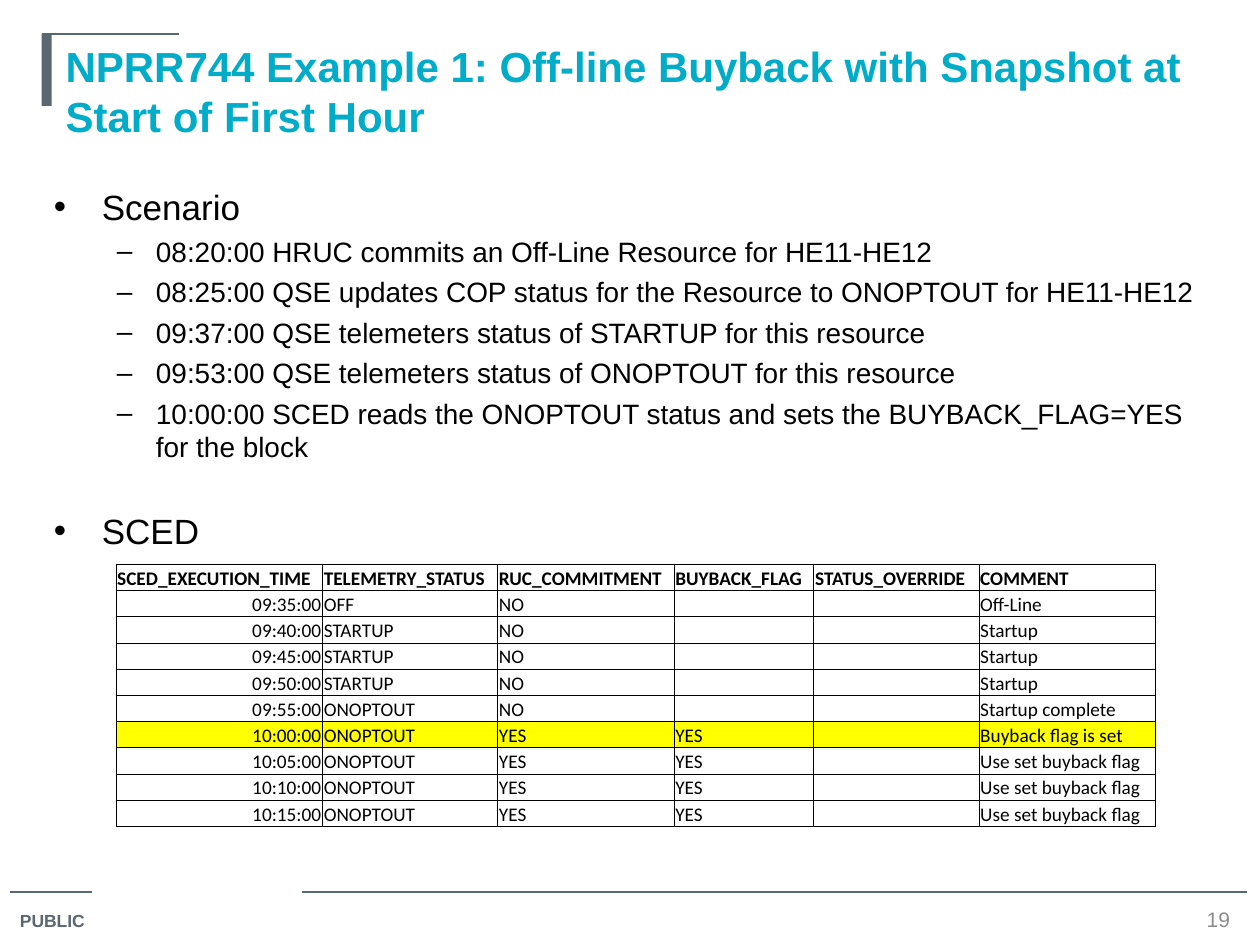
"""Build the off-line buyback example slide with its scenario and SCED table."""
from lxml.etree import SubElement
from pptx import Presentation
from pptx.dml.color import RGBColor
from pptx.enum.shapes import MSO_CONNECTOR, MSO_SHAPE
from pptx.enum.text import MSO_ANCHOR as Anchor, MSO_AUTO_SIZE, PP_ALIGN as Align
from pptx.oxml.ns import qn
from pptx.util import Inches, Pt

TITLE = "NPRR744 Example 1: Off-line Buyback with Snapshot at Start of First Hour"
SLATE, TEAL, BLACK, GRAY, YELLOW = "5B6770", "00ACC8", "000000", "8C8C8C", "FFFF00"
OUTLINE = [
    (0, "Scenario"),
    (1, "08:20:00 HRUC commits an Off-Line Resource for HE11-HE12"),
    (1, "08:25:00 QSE updates COP status for the Resource to ONOPTOUT for HE11-HE12"),
    (1, "09:37:00 QSE telemeters status of STARTUP for this resource"),
    (1, "09:53:00 QSE telemeters status of ONOPTOUT for this resource"),
    (1, "10:00:00 SCED reads the ONOPTOUT status and sets the BUYBACK_FLAG=YES for the block"),
    (0, "SCED"),
]
# bullet, font size, left margin, hanging indent, space before
LEVELS = [("•", 20, 0.38, 0.38, 26), ("–", 16, 0.81, 0.31, 4)]
SCED_ROWS = [
    ("SCED_EXECUTION_TIME", "TELEMETRY_STATUS", "RUC_COMMITMENT", "BUYBACK_FLAG",
     "STATUS_OVERRIDE", "COMMENT"),
    ("09:35:00", "OFF", "NO", "", "", "Off-Line"),
    ("09:40:00", "STARTUP", "NO", "", "", "Startup"),
    ("09:45:00", "STARTUP", "NO", "", "", "Startup"),
    ("09:50:00", "STARTUP", "NO", "", "", "Startup"),
    ("09:55:00", "ONOPTOUT", "NO", "", "", "Startup complete"),
    ("10:00:00", "ONOPTOUT", "YES", "YES", "", "Buyback flag is set"),
    ("10:05:00", "ONOPTOUT", "YES", "YES", "", "Use set buyback flag"),
    ("10:10:00", "ONOPTOUT", "YES", "YES", "", "Use set buyback flag"),
    ("10:15:00", "ONOPTOUT", "YES", "YES", "", "Use set buyback flag"),
]
COLUMN_WIDTHS = [1.64, 1.39, 1.4, 1.11, 1.31, 1.4]
TABLE_HEIGHT = 2.08
FLAG_SET_TIME = "10:00:00"
RULES = [(0.08, 0.73, 7.08), (2.4, 9.9, 7.08), (0.33, 1.42, 0.27)]


def rgb(color):
    return RGBColor.from_string(color)


def box(*lengths):
    return [Inches(length) for length in lengths]


def style(paragraph, size, color, bold=False, face="Arial"):
    for run in paragraph.runs:
        font = run.font
        font.name, font.size, font.bold = face, Pt(size), bold
        font.color.rgb = rgb(color)


def add_rule(slide, left, right, y):
    rule = slide.shapes.add_connector(MSO_CONNECTOR.STRAIGHT, *box(left, y, right, y))
    rule.line.color.rgb = rgb(SLATE)
    rule.line.width = Pt(0.75)
    SubElement(rule._element.spPr, qn("a:effectLst"))


def add_label(slide, area, text, size, color, bold=False, align=Align.LEFT, anchor=Anchor.TOP):
    frame = slide.shapes.add_textbox(*box(*area)).text_frame
    frame.text = text
    frame.vertical_anchor = anchor
    frame.paragraphs[0].alignment = align
    style(frame.paragraphs[0], size, color, bold)


def add_outline(slide):
    frame = slide.shapes.add_textbox(*box(0.33, 1.42, 9.33, 3.06)).text_frame
    frame.word_wrap = True
    for index, (level, text) in enumerate(OUTLINE):
        bullet, size, margin, hang, before = LEVELS[level]
        paragraph = frame.add_paragraph() if index else frame.paragraphs[0]
        paragraph.text = text
        paragraph.level = level
        if index:
            paragraph.space_before = Pt(before)
        props = paragraph._p.get_or_add_pPr()
        props.set("marL", str(Inches(margin)))
        props.set("indent", str(-Inches(hang)))
        SubElement(props, qn("a:buFont"), typeface="Arial")
        SubElement(props, qn("a:buChar"), char=bullet)
        style(paragraph, size, BLACK)


def add_borders(cell):
    props = cell._tc.get_or_add_tcPr()
    for side in ("L", "R", "T", "B"):
        line = SubElement(props, qn(f"a:ln{side}"), w=str(Pt(0.5)))
        SubElement(SubElement(line, qn("a:solidFill")), qn("a:srgbClr"), val=BLACK)


def fill_cell(cell, text, header, right, highlighted):
    cell.text = text
    cell.vertical_anchor = Anchor.BOTTOM
    cell.margin_left = cell.margin_right = cell.margin_top = Inches(0.01)
    cell.margin_bottom = 0
    paragraph = cell.text_frame.paragraphs[0]
    paragraph.alignment = Align.RIGHT if right else Align.LEFT
    style(paragraph, 11, BLACK, header, "Calibri")
    if not text:
        SubElement(paragraph._p, qn("a:endParaRPr"), sz="1100")
    add_borders(cell)
    if highlighted:
        cell.fill.solid()
        cell.fill.fore_color.rgb = rgb(YELLOW)
    else:
        cell.fill.background()


def add_sced_table(slide):
    area = box(0.92, 4.48, sum(COLUMN_WIDTHS), TABLE_HEIGHT)
    table = slide.shapes.add_table(len(SCED_ROWS), len(COLUMN_WIDTHS), *area).table
    table.first_row = table.horz_banding = False
    for column, width in zip(table.columns, COLUMN_WIDTHS):
        column.width = Inches(width)
    for r, values in enumerate(SCED_ROWS):
        table.rows[r].height = Inches(TABLE_HEIGHT / len(SCED_ROWS))
        for c, text in enumerate(values):
            fill_cell(table.cell(r, c), text, r == 0, r > 0 and c == 0,
                      values[0] == FLAG_SET_TIME)


def add_title(slide):
    title = slide.shapes.title
    title.left, title.top, title.width, title.height = box(0.42, 0.27, 9.25, 1.25)
    frame = title.text_frame
    frame.text = TITLE
    frame.word_wrap = True
    frame.auto_size = MSO_AUTO_SIZE.NONE
    frame.vertical_anchor = Anchor.TOP
    frame.paragraphs[0].alignment = Align.LEFT
    style(frame.paragraphs[0], 24, TEAL, True)


def main():
    deck = Presentation()
    deck.slide_width, deck.slide_height = box(10, 7.5)
    slide = deck.slides.add_slide(deck.slide_layouts[5])
    for rule in RULES:
        add_rule(slide, *rule)
    accent = slide.shapes.add_shape(MSO_SHAPE.RECTANGLE, *box(0.33, 0.27, 0.08, 0.57))
    accent.shadow.inherit = False
    accent.fill.solid()
    accent.fill.fore_color.rgb = rgb(SLATE)
    accent.line.fill.background()
    add_title(slide)
    add_label(slide, (0.06, 7.17, 0.77, 0.28), "PUBLIC", 10, SLATE, True)
    add_label(slide, (9.42, 7.18, 0.5, 0.23), "19", 12, GRAY,
              align=Align.CENTER, anchor=Anchor.MIDDLE)
    add_outline(slide)
    add_sced_table(slide)
    deck.save("out.pptx")


if __name__ == "__main__":
    main()
